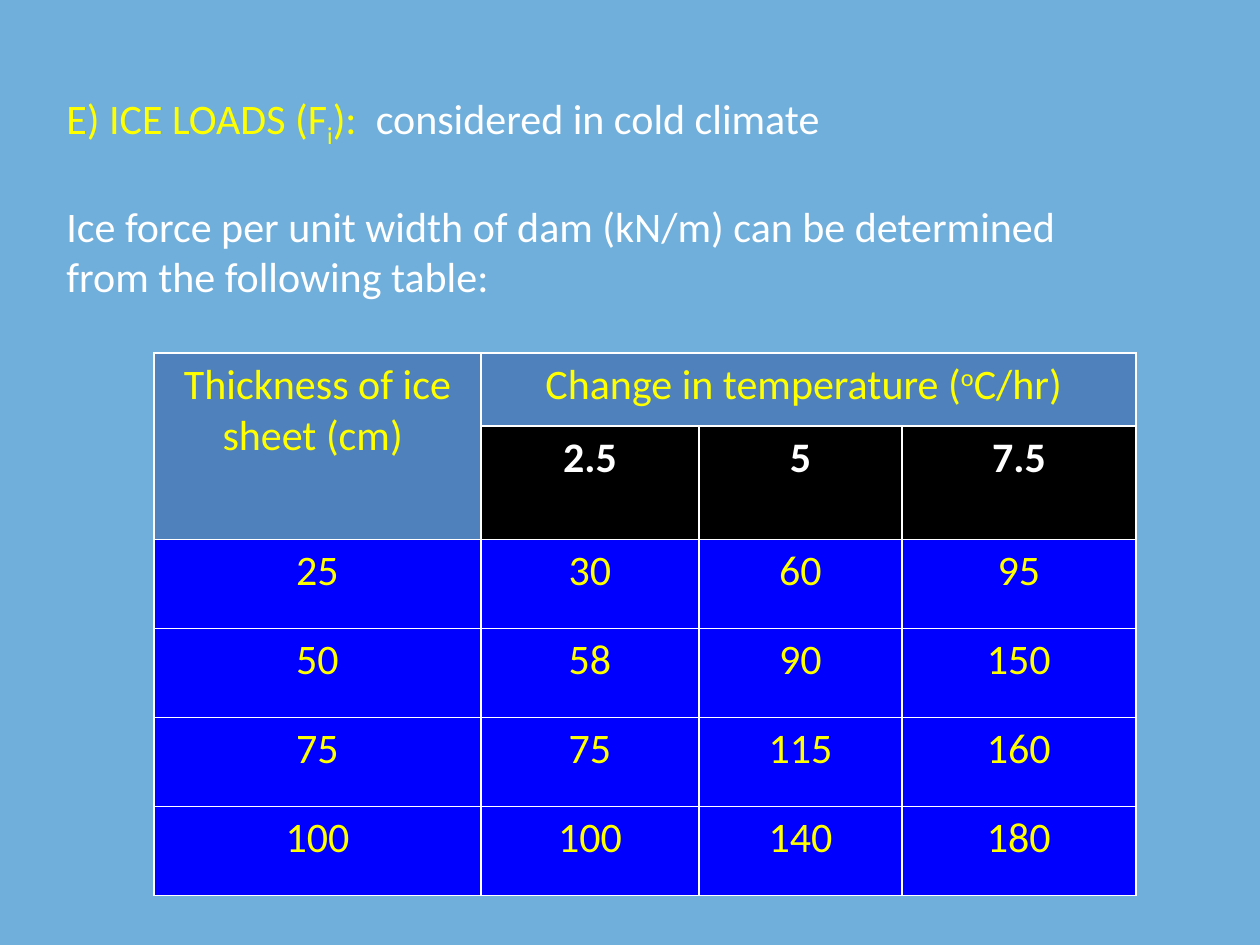
from lxml import etree
from pptx import Presentation
from pptx.dml.color import RGBColor
from pptx.enum.text import MSO_ANCHOR, PP_ALIGN
from pptx.oxml.ns import qn
from pptx.util import Pt

PX = 914400 / 126
CENTER = PP_ALIGN.CENTER
TOP = MSO_ANCHOR.TOP
HUES = {
    "sky": "70AFDC",
    "steel": "4F81BD",
    "blue": "0000FF",
    "black": "000000",
    "yellow": "FFFF00",
    "white": "FFFFFF",
}


def px(*nums):
    return [round(n * PX) for n in nums]


def add_run(para, text, hue, base=0, bold=False):
    run = para.add_run()
    run.text = text
    run.font.name = "Calibri"
    run.font.size = Pt(24)
    run.font.bold = bold
    run.font.color.rgb = RGBColor.from_string(HUES[hue])
    if base:
        run._r.get_or_add_rPr().set("baseline", str(base * 1000))


deck = Presentation()
deck.slide_width, deck.slide_height = px(1260, 945)
slide = deck.slides.add_slide(deck.slide_layouts[6])
back = slide.background.fill
back.solid()
back.fore_color.rgb = RGBColor.from_string(HUES["sky"])

frame = slide.shapes.add_textbox(*px(54, 86, 1152, 217)).text_frame
frame.word_wrap = True
title = frame.paragraphs[0]
add_run(title, "E) ICE LOADS (F", "yellow")
add_run(title, "i", "yellow", -25)
add_run(title, "):  ", "yellow")
add_run(title, "considered in cold climate", "white")
intro = [
    ("Ice force per unit width of dam (kN/m) can be determined", 29),
    ("from the following table:", 0),
]
for text, gap in intro:
    para = frame.add_paragraph()
    para.space_before = Pt(gap)
    add_run(para, text, "white")

wide = [327, 218, 203, 234]
high = [73, 113] + [89] * 4
size = px(154, 353, sum(wide), sum(high))
table = slide.shapes.add_table(len(high), len(wide), *size).table
table.first_row = False
table.horz_banding = False
for col, width in zip(table.columns, px(*wide)):
    col.width = width
for row, height in zip(table.rows, px(*high)):
    row.height = height

loads = [
    ["", "2.5", "5", "7.5"],
    ["25", "30", "60", "95"],
    ["50", "58", "90", "150"],
    ["75", "75", "115", "160"],
    ["100", "100", "140", "180"],
]
for r in range(len(high)):
    for c in range(len(wide)):
        cell = table.cell(r, c)
        cell.vertical_anchor = TOP
        props = cell._tc.get_or_add_tcPr()
        for side in ("lnL", "lnR", "lnT", "lnB"):
            line = etree.SubElement(props, qn("a:" + side), w=str(Pt(1)))
            paint = etree.SubElement(line, qn("a:solidFill"))
            etree.SubElement(paint, qn("a:srgbClr"), val=HUES["white"])
        head = r == 0 or (r == 1 and c == 0)
        fill = "steel" if head else "black" if r == 1 else "blue"
        cell.fill.solid()
        cell.fill.fore_color.rgb = RGBColor.from_string(HUES[fill])
        para = cell.text_frame.paragraphs[0]
        para.alignment = CENTER
        if not head:
            hue = "white" if r == 1 else "yellow"
            add_run(para, loads[r - 1][c], hue, bold=r == 1)

table.cell(0, 0).merge(table.cell(1, 0))
table.cell(0, 1).merge(table.cell(0, 3))
thick = table.cell(0, 0).text_frame.paragraphs[0]
add_run(thick, "Thickness of ice sheet (cm) ", "yellow")
change = table.cell(0, 1).text_frame.paragraphs[0]
add_run(change, "Change in temperature (", "yellow")
add_run(change, "o", "yellow", 30)
add_run(change, "C/hr) ", "yellow")

deck.save("out.pptx")
